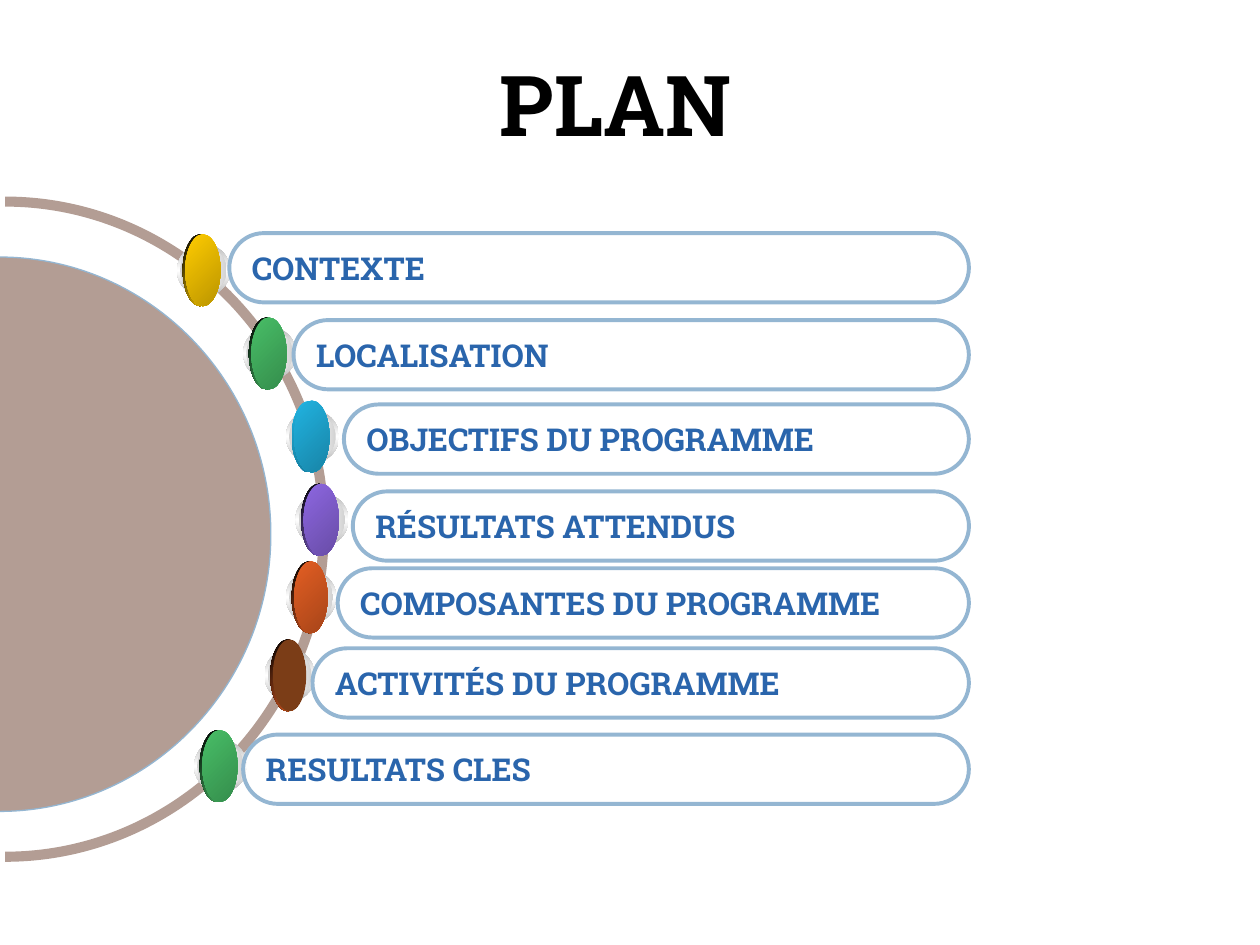
import lxml.etree
import pptx
import pptx.dml.color
import pptx.enum.shapes
import pptx.enum.text
import pptx.oxml.ns
import pptx.util

MSO_SHAPE = pptx.enum.shapes.MSO_SHAPE
ANCHOR = pptx.enum.text.MSO_ANCHOR
qn = pptx.oxml.ns.qn

presentation = pptx.Presentation()
presentation.slide_width = pptx.util.Inches(10)
presentation.slide_height = pptx.util.Inches(7.5)
column = presentation.slide_width / 100
row = presentation.slide_height / 75
slide = presentation.slides.add_slide(presentation.slide_layouts[5])


def color(hex_text):
    return pptx.dml.color.RGBColor.from_string(hex_text)


def add_ellipse(group, left, top, width, height, stops, angle):
    """Ellipse in grid units; stops are evenly spaced (color, shade percent), angle is clockwise."""
    ellipse = group.shapes.add_shape(
        MSO_SHAPE.OVAL, round(left * column), round(top * row),
        round(width * column), round(height * row))
    ellipse.shadow.inherit = False
    ellipse.line.fill.background()
    if len(stops) == 1:
        ellipse.fill.solid()
        ellipse.fill.fore_color.rgb = color(stops[0][0])
        return
    ellipse.fill.gradient()
    ellipse.fill.gradient_angle = (360 - angle) % 360
    stop_list = ellipse.element.spPr.find(".//" + qn("a:gsLst"))
    stop_list.clear()
    for index, (hex_text, shade) in enumerate(stops):
        stop = lxml.etree.SubElement(
            stop_list, qn("a:gs"), pos=str(round(100000 * index / (len(stops) - 1))))
        stop_color = lxml.etree.SubElement(stop, qn("a:srgbClr"), val=hex_text)
        if shade < 100:
            lxml.etree.SubElement(stop_color, qn("a:shade"), val=str(shade * 1000))


# Title
title = slide.shapes.title
title.left, title.top = round(33.5 * column), round(3.7 * row)
title.width, title.height = round(30.7 * column), round(9.1 * row)
title.text_frame.text = "PLAN"
title.text_frame.vertical_anchor = ANCHOR.TOP
title.text_frame.paragraphs[0].alignment = pptx.enum.text.PP_ALIGN.CENTER
title_font = title.text_frame.paragraphs[0].runs[0].font
title_font.name, title_font.size, title_font.bold = "Roboto Slab", pptx.util.Pt(48), True
title_font.color.rgb = color("000000")

# Half ring and half disc: center, radii of each half ellipse
bend = 0.55
half_ellipse = [(0, -1), (bend, -1), (1, -bend), (1, 0), (1, bend), (bend, 1), (0, 1)]
for center_x, center_y, radii in [
    (0.4, 42, [(25.7, 26.4), (24.9, 25.6)]),
    (-0.05, 42.4, [(21.55, 22)]),
]:
    points = []
    for (radius_x, radius_y), direction in zip(radii, (1, -1)):
        points += [(round((center_x + radius_x * x) * column),
                    round((center_y + radius_y * y) * row))
                   for x, y in half_ellipse[::direction]]
    builder = slide.shapes.build_freeform(*points[0])
    builder.add_line_segments(points[1:], close=True)
    half_round = builder.convert_to_shape()
    segments = half_round.element.spPr.findall(".//" + qn("a:lnTo"))
    for first in range(0, len(segments), len(half_ellipse)):
        for start in (first, first + 3):
            curve = lxml.etree.Element(qn("a:cubicBezTo"))
            segments[start].addprevious(curve)
            for segment in segments[start:start + 3]:
                curve.append(segment[0])
                segment.getparent().remove(segment)
    half_round.shadow.inherit = False
    half_round.fill.solid()
    half_round.fill.fore_color.rgb = color("B39D94")
    if len(radii) == 2:
        half_round.line.fill.background()
    else:
        half_round.line.color.rgb = color("94B6D2")
        half_round.line.width = pptx.util.Pt(0)

# Topic, label left and top, bead left, top and width, bead stops, edge stops and angle
black = ("000000", 100)
yellow, green, blue, purple, orange, brown = [
    (hex_text, 100)
    for hex_text in ("FFCC00", "48BE67", "21B3E1", "8D67E1", "E35E23", "7B3D17")]
topics = [
    ("CONTEXTE", 18.2, 18.5, 14.7, 18.6, 2.8, [yellow, ("FFCC00", 49)], [black, yellow], 45),
    ("LOCALISATION", 23.3, 25.4, 19.95, 25.2, 2.8, [green, ("48BE67", 51)], [black, green], 45),
    ("OBJECTIFS DU PROGRAMME", 27.3, 32.1, 23.35, 31.8, 2.8,
     [blue, ("21B3E1", 50)], [blue, ("21B3E1", 48)], 90),
    ("RÉSULTATS ATTENDUS", 28, 39, 24.1, 38.4, 2.8,
     [purple, ("8D67E1", 50)], [black, purple], 45),
    ("COMPOSANTES DU PROGRAMME", 26.8, 45.1, 23.35, 44.55, 2.65,
     [orange, ("E35E23", 50)], [black, orange], 45),
    ("ACTIVITÉS DU PROGRAMME", 24.8, 51.45, 21.65, 50.75, 2.65, [brown], [black, orange], 45),
    ("RESULTATS CLES", 19.3, 58.3, 16.05, 57.95, 2.8,
     [green, ("48BE67", 51)], [black, green], 45),
]
label_right, label_height, bead_height = 76.9, 5.5, 5.7
white = ("FFFFFF", 100)
outer_rim, inner_rim = [[("FFFFFF", shade), white, ("FFFFFF", shade)] for shade in (47, 64)]

for (topic, label_left, label_top, bead_left, bead_top, bead_width,
     bead_stops, edge_stops, edge_angle) in topics:
    rim_left, rim_top, rim_width = bead_left - 0.65, bead_top + 0.75, bead_width * 1.5
    bead = slide.shapes.add_group_shape()
    add_ellipse(bead, rim_left, rim_top, rim_width, 4.2, outer_rim, 90)
    add_ellipse(bead, rim_left + 0.25, rim_top + 0.25, rim_width - 0.5, 3.7, inner_rim, 0)
    add_ellipse(bead, bead_left - 0.2, bead_top, 2.8, bead_height, edge_stops, edge_angle)
    add_ellipse(bead, bead_left, bead_top, bead_width, bead_height, bead_stops, 45)

    label = slide.shapes.add_shape(
        MSO_SHAPE.ROUNDED_RECTANGLE, round(label_left * column), round(label_top * row),
        round((label_right - label_left) * column), round(label_height * row))
    label.adjustments[0] = 0.5
    label.shadow.inherit = False
    label.fill.background()
    label.line.color.rgb = color("94B6D2")
    label.line.width = pptx.util.Pt(2.25)
    label.text_frame.text = topic
    label.text_frame.word_wrap = True
    label.text_frame.vertical_anchor = ANCHOR.MIDDLE
    paragraph = label.text_frame.paragraphs[0]
    paragraph.alignment = pptx.enum.text.PP_ALIGN.LEFT
    font = paragraph.runs[0].font
    font.name, font.size, font.bold = "Roboto Slab", pptx.util.Pt(18), True
    font.color.rgb = color("2A65AC")

presentation.save("out.pptx")
